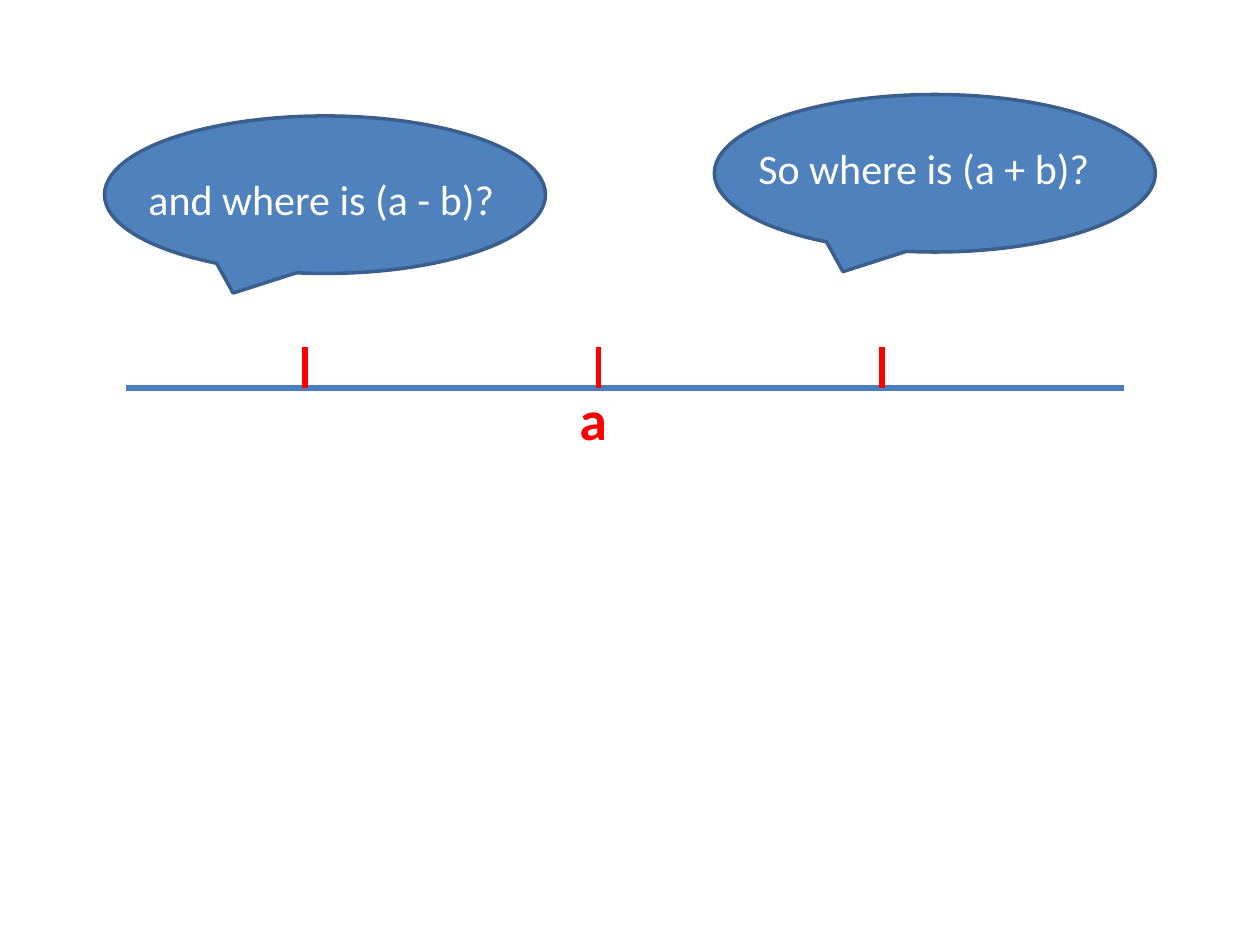
from pptx import Presentation
from pptx.dml.color import RGBColor
from pptx.enum.shapes import MSO_CONNECTOR, MSO_SHAPE
from pptx.enum.text import MSO_AUTO_SIZE
from pptx.oxml.ns import qn
from pptx.util import Inches, Pt
from lxml.etree import SubElement

BLUE, DARK_BLUE, AXIS_BLUE = "4F81BD", "3A5F8C", "4B7EBC"
RED, WHITE = "FF0000", "FFFFFF"
AXIS_Y, TICK_TOP = 3.08, 2.75


def color(value):
    return RGBColor.from_string(value)


class NumberLineSlide:
    """Draws number line elements in one style on the current slide."""

    font = "Calibri"

    def __init__(self, slide):
        self.slide = slide

    def line(self, x1, y1, x2, y2, line_color):
        connector = self.slide.shapes.add_connector(
            MSO_CONNECTOR.STRAIGHT, Inches(x1), Inches(y1), Inches(x2), Inches(y2))
        connector.line.color.rgb = color(line_color)
        connector.line.width = Pt(3)
        SubElement(connector._element.spPr, qn("a:effectLst"))

    def callout(self, left, top):
        shape = self.slide.shapes.add_shape(
            MSO_SHAPE.OVAL_CALLOUT, Inches(left), Inches(top), Inches(3.5), Inches(1.25))
        shape.shadow.inherit = False
        shape.fill.solid()
        shape.fill.fore_color.rgb = color(BLUE)
        shape.line.color.rgb = color(DARK_BLUE)
        shape.line.width = Pt(2)

    def text(self, left, top, width, height, wording, size, text_color, bold=False):
        box = self.slide.shapes.add_textbox(
            Inches(left), Inches(top), Inches(width), Inches(height))
        frame = box.text_frame
        frame.word_wrap = True
        frame.auto_size = MSO_AUTO_SIZE.SHAPE_TO_FIT_TEXT
        run = frame.paragraphs[0].add_run()
        run.text = wording
        run.font.name = self.font
        run.font.size = Pt(size)
        run.font.bold = bold
        run.font.color.rgb = color(text_color)


def main():
    presentation = Presentation()
    presentation.slide_width = Inches(10)
    presentation.slide_height = Inches(7.5)
    slide = presentation.slides.add_slide(presentation.slide_layouts[6])
    number_line = NumberLineSlide(slide)

    number_line.line(1, AXIS_Y, 8.92, AXIS_Y, AXIS_BLUE)
    for tick_x in (2.42, 4.75, 7):
        number_line.line(tick_x, TICK_TOP, tick_x, AXIS_Y, RED)
    number_line.text(4.5, 3, 0.75, 0.64, "a", 32, RED, bold=True)

    questions = (
        (5.67, 0.75, 1.08, 2.83, "So where is (a + b)?"),
        (0.83, 0.92, 1.33, 3.08, "and where is (a - b)?"),
    )
    for left, top, text_top, text_width, wording in questions:
        number_line.callout(left, top)
        number_line.text(left + 0.25, text_top, text_width, 0.5, wording, 24, WHITE)

    presentation.save("out.pptx")


if __name__ == "__main__":
    main()
